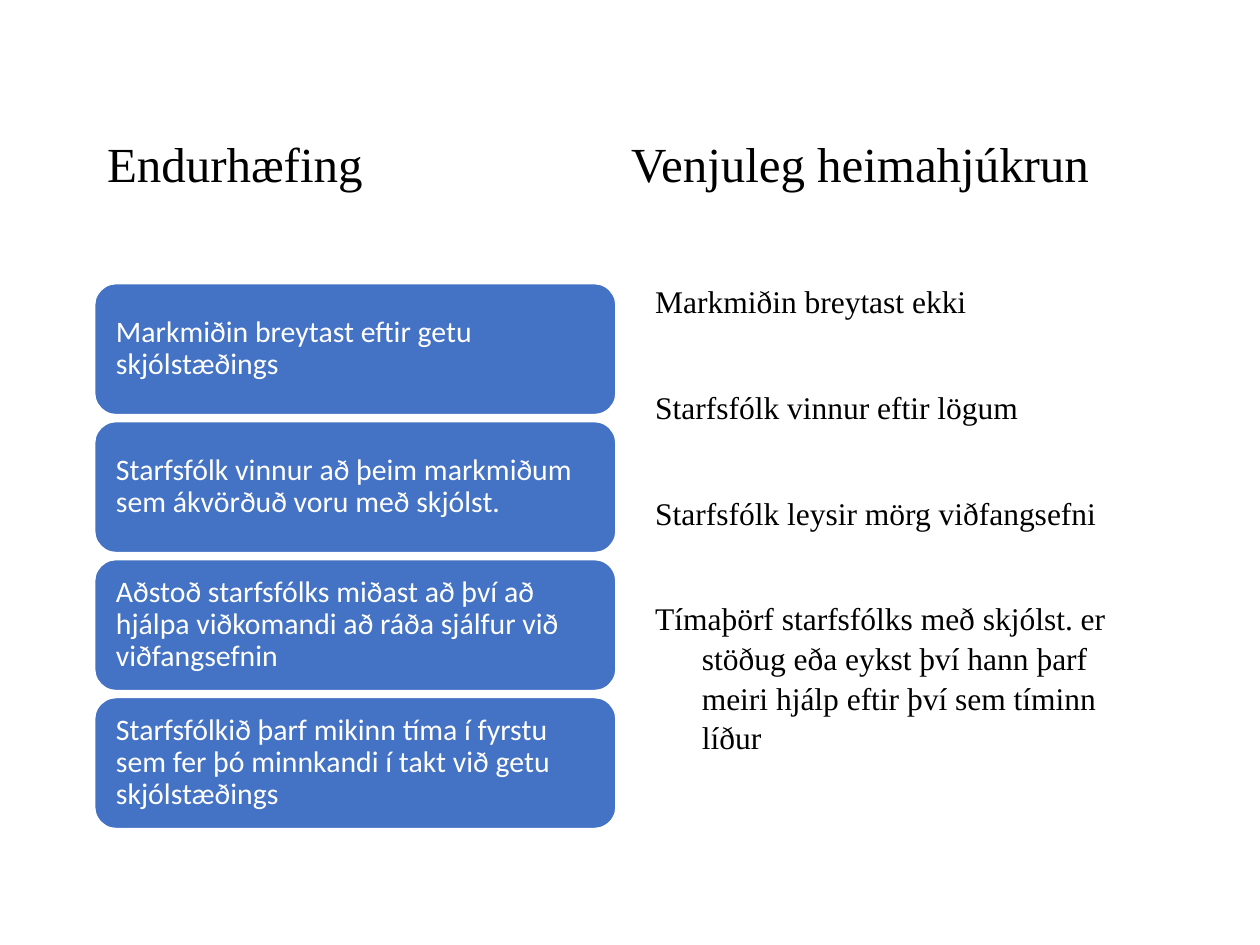
from lxml.etree import SubElement
from pptx import Presentation
from pptx.dml.color import RGBColor
from pptx.enum.shapes import MSO_SHAPE
from pptx.enum.text import MSO_ANCHOR, MSO_AUTO_SIZE, PP_ALIGN
from pptx.oxml.ns import qn
from pptx.util import Inches, Pt

COLORS = {"ink": "000000", "card": "4472C4", "paper": "FFFFFF"}
SERIF, SANS = "Times New Roman", "Calibri"
LEFT, COLUMN_WIDTH = 0.075, 0.414
CARD_TOP, CARD_HEIGHT, CARD_STEP = 0.3, 0.139, 0.146
HEADINGS = ["Endurhæfing", "Venjuleg heimahjúkrun"]
REHABILITATION = [
    "Markmiðin breytast eftir getu skjólstæðings",
    "Starfsfólk vinnur að þeim markmiðum sem ákvörðuð voru með skjólst.",
    "Aðstoð starfsfólks miðast að því að hjálpa viðkomandi að ráða sjálfur við viðfangsefnin",
    "Starfsfólkið þarf mikinn tíma í fyrstu sem fer þó minnkandi í takt við getu skjólstæðings",
]
HOME_NURSING = [
    "Markmiðin breytast ekki",
    "Starfsfólk vinnur eftir lögum",
    "Starfsfólk leysir mörg viðfangsefni",
    "Tímaþörf starfsfólks með skjólst. er stöðug eða eykst því hann þarf meiri hjálp eftir því sem tíminn líður",
]


class ComparisonSlide:
    """Holds the style and the current slide, with lengths as shares of its size."""

    def __init__(self, deck):
        self.deck = deck
        self.page = deck.slides.add_slide(deck.slide_layouts[1])

    def frame(self, left, top, width, height):
        across, down = self.deck.slide_width, self.deck.slide_height
        return [round(share * side) for share, side in
                zip((left, top, width, height), (across, down, across, down))]

    def place(self, box, *shares):
        for name, value in zip(("left", "top", "width", "height"), self.frame(*shares)):
            setattr(box, name, value)

    def set_text(self, box, texts, font, size, color, anchor, inset=None, **spacing):
        text_frame = box.text_frame
        text_frame.text = "\n".join(texts)
        settings = {"word_wrap": True, "auto_size": MSO_AUTO_SIZE.NONE,
                    "vertical_anchor": anchor}
        if inset is not None:
            settings.update({f"margin_{side}": Inches(inset)
                             for side in ("left", "top", "right", "bottom")})
        for name, value in settings.items():
            setattr(text_frame, name, value)
        paragraph_format = {"alignment": PP_ALIGN.LEFT, "space_before": Pt(0), **spacing}
        for para in text_frame.paragraphs:
            for name, value in paragraph_format.items():
                setattr(para, name, value)
            for span in para.runs:
                span.font.name, span.font.size = font, Pt(size)
                span.font.color.rgb = RGBColor.from_string(COLORS[color])
        return text_frame.paragraphs

    def title(self, headings, tab, *shares):
        box = self.page.shapes.title
        self.place(box, *shares)
        para = self.set_text(box, ["\t".join(headings)], SERIF, 28, "ink",
                             MSO_ANCHOR.MIDDLE)[0]
        stops = SubElement(para._p.get_or_add_pPr(), qn("a:tabLst"))
        SubElement(stops, qn("a:tab"), pos=str(Inches(tab)), algn="l")

    def body(self, items, *shares):
        box = self.page.placeholders[1]
        self.place(box, *shares)
        paragraphs = self.set_text(box, items, SERIF, 18, "ink", MSO_ANCHOR.TOP,
                                   line_spacing=1.05)
        for index, para in enumerate(paragraphs):
            para.space_before = Pt(37.7 if index else 0)
            properties = para._p.get_or_add_pPr()
            properties.set("marL", str(Inches(0.37)))
            properties.set("indent", str(-Inches(0.37)))
            SubElement(properties, qn("a:buNone"))

    def card(self, text, *shares):
        box = self.page.shapes.add_shape(MSO_SHAPE.ROUNDED_RECTANGLE, *self.frame(*shares))
        box.shadow.inherit = False
        box.fill.solid()
        box.fill.fore_color.rgb = RGBColor.from_string(COLORS["card"])
        box.line.color.rgb = RGBColor.from_string(COLORS["paper"])
        box.line.width = Pt(1)
        self.set_text(box, [text], SANS, 17, "paper", MSO_ANCHOR.MIDDLE, 0.12,
                      line_spacing=0.9)


def main():
    deck = Presentation()
    deck.slide_width, deck.slide_height = Inches(10), Inches(7.5)
    slide = ComparisonSlide(deck)
    slide.title(HEADINGS, 4.16, LEFT, 0.09, 0.849, 0.165)
    slide.body(HOME_NURSING, 0.51, 0.29, COLUMN_WIDTH, 0.6)
    for row, text in enumerate(REHABILITATION):
        slide.card(text, LEFT, CARD_TOP + row * CARD_STEP, COLUMN_WIDTH, CARD_HEIGHT)
    deck.save("out.pptx")


if __name__ == "__main__":
    main()
